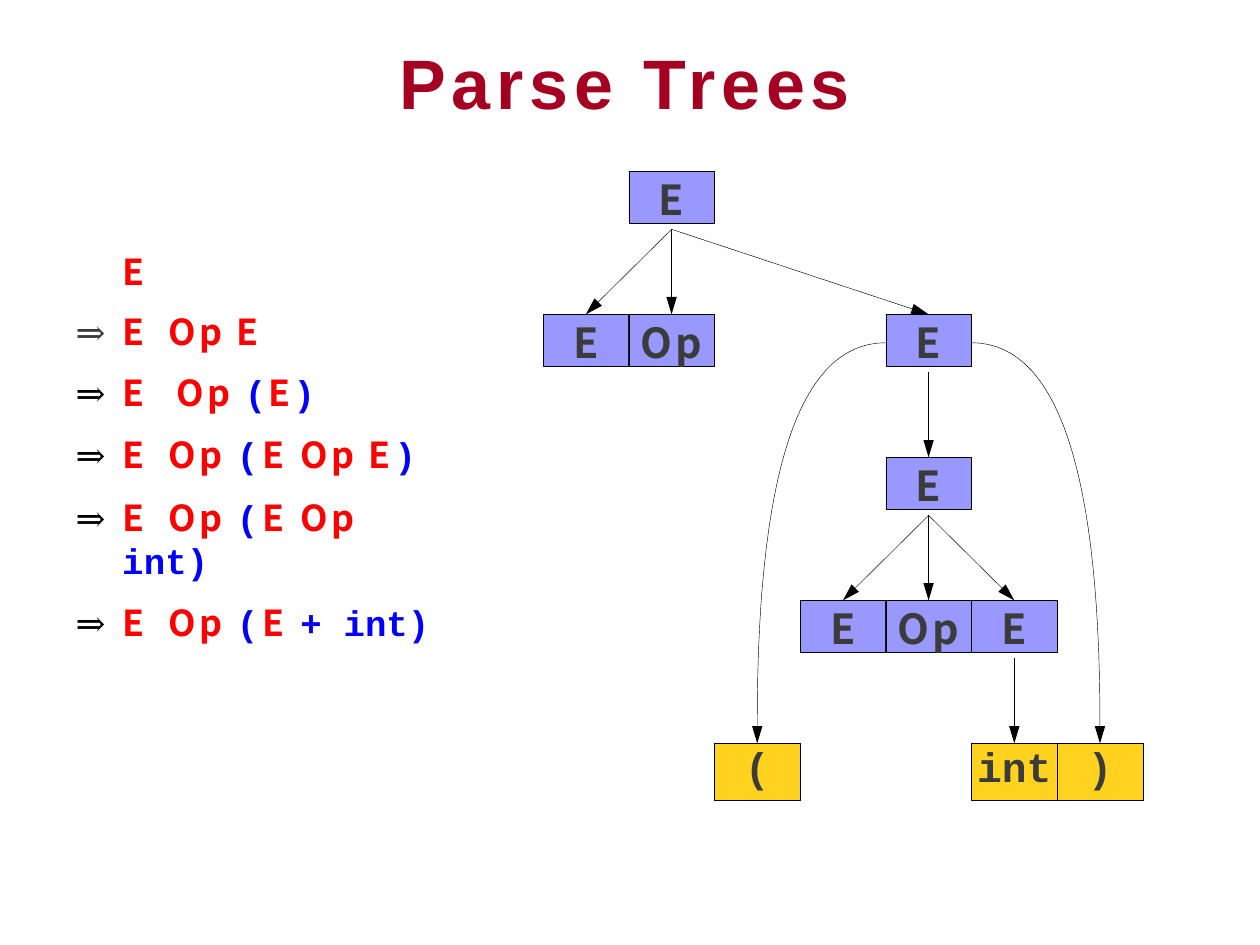
from lxml.etree import SubElement
from pptx import Presentation
from pptx.dml.color import RGBColor
from pptx.enum.shapes import MSO_CONNECTOR, MSO_SHAPE
from pptx.enum.text import MSO_ANCHOR, PP_ALIGN
from pptx.oxml.ns import qn
from pptx.util import Inches, Pt

SANS, MONO = "Noto Sans CJK KR", "Courier New"
BLACK, GREY, RED, BLUE = "000000", "3B3B3B", "FF0000", "0000FF"


def rgb(value):
    return RGBColor.from_string(value)


def finish_arrow(arrow):
    """Give a connector or open curve a thin black line, an arrowhead and no shadow."""
    arrow.line.color.rgb = rgb(BLACK)
    arrow.line.width = Pt(0.25)
    SubElement(arrow.line._get_or_add_ln(), qn("a:tailEnd"), type="triangle", w="med", len="lg")
    properties = arrow._element.spPr
    if properties.find(qn("a:effectLst")) is None:
        SubElement(properties, qn("a:effectLst"))


prs = Presentation()
prs.slide_width, prs.slide_height = Inches(10), Inches(7.5)
slide = prs.slides.add_slide(prs.slide_layouts[6])
shapes = slide.shapes

# Title
title = shapes.add_textbox(Inches(0.17), Inches(0.3), Inches(9.58), Inches(0.7)).text_frame
title.word_wrap = True
title.vertical_anchor = MSO_ANCHOR.MIDDLE
title.margin_left = title.margin_right = title.margin_top = title.margin_bottom = 0
heading = title.paragraphs[0]
heading.alignment = PP_ALIGN.CENTER
heading.font.name, heading.font.size, heading.font.bold = "Arial", Pt(40), True
heading.font.color.rgb = rgb("A50021")
heading_run = heading.add_run()
heading_run.text = "Parse Trees"
heading_run._r.get_or_add_rPr().set("spc", "335")

# Derivation: space before, arrow colour, then (symbol, letter spacing in points)
E, OP = ("E ", 4.7), ("Op ", 1.8)
derivation = [
    (10.9, None, [("E", 4.7)]),
    (10.1, GREY, [E, OP, ("E", 4.7)]),
    (10.1, BLACK, [("E ", 7), OP, ("(", 1.5), ("E", 1.5), (")", 1.5)]),
    (11.3, BLACK, [E, OP, ("(", 2.3), ("E ", 2.3), OP, ("E", 2.4), (")", 2.4)]),
    (11.3, BLACK, [E, OP, ("(", 2.3), ("E ", 2.3), OP, ("int)", 0.1)]),
    (11.3, BLACK, [E, OP, ("(", 2.3), ("E ", 2.3), ("+ ", 0.1), ("int)", 0)]),
]
steps = shapes.add_textbox(Inches(0.59), Inches(1.83), Inches(2.98), Inches(2.96)).text_frame
steps.word_wrap = True
steps.margin_left = steps.margin_right = steps.margin_bottom = 0
steps.margin_top = Inches(0.15)
for number, (space, arrow_color, symbols) in enumerate(derivation):
    step = steps.add_paragraph() if number else steps.paragraphs[0]
    step.space_before = Pt(space)
    step.font.size = Pt(20.4)
    indents = step._p.get_or_add_pPr()
    indents.set("marL", str(Inches(0.38)))
    pieces = [(text, spacing, MONO, BLUE, True) if text[0] in "(+)i"
              else (text, spacing, SANS, RED, True) for text, spacing in symbols]
    if arrow_color:
        indents.set("indent", str(-Inches(0.37)))
        pieces.insert(0, ("⇒\t", -0.5, "Cambria", arrow_color, False))
    for text, spacing, font, color, bold in pieces:
        run = step.add_run()
        run.text = text
        run.font.name, run.font.bold, run.font.size = font, bold, Pt(20.4)
        run.font.color.rgb = rgb(color)
        run._r.get_or_add_rPr().set("spc", str(round(spacing * 100)))

# Tree nodes on a grid of columns and levels
LEFT, TOP, CELL, LEVEL = 4.31, 1.36, 0.68, 1.135
NODE_HEIGHT, LEAF_HEIGHT = 0.41, 0.45
nodes = {}
for column, level, symbol in [
    (1, 0, "E"), (0, 1, "E"), (1, 1, "Op"), (4, 1, "E"), (4, 2, "E"),
    (3, 3, "E"), (4, 3, "Op"), (5, 3, "E"), (2, 4, "("), (5, 4, "int"), (6, 4, ")"),
]:
    leaf = level == 4
    node = shapes.add_shape(
        MSO_SHAPE.RECTANGLE, Inches(LEFT + column * CELL), Inches(TOP + level * LEVEL),
        Inches(CELL), Inches(LEAF_HEIGHT if leaf else NODE_HEIGHT))
    node.shadow.inherit = False
    node.fill.solid()
    node.fill.fore_color.rgb = rgb("FFD21F" if leaf else "9898FF")
    node.line.color.rgb = rgb(BLACK)
    node.line.width = Pt(0.25)
    frame = node.text_frame
    frame.vertical_anchor = MSO_ANCHOR.TOP
    frame.margin_left = frame.margin_right = frame.margin_bottom = 0
    frame.margin_top = Inches(0.03 if leaf else 0.02)
    label = frame.paragraphs[0]
    label.alignment = PP_ALIGN.CENTER
    label.font.name, label.font.size, label.font.bold = MONO if leaf else SANS, Pt(23.6), True
    label.font.color.rgb = rgb(GREY)
    if leaf:
        label.line_spacing = Pt(25.2)
    else:
        label.space_before = Pt(1.1)
    run = label.add_run()
    run.text = symbol
    run._r.get_or_add_rPr().set("spc", {"E": "530", "Op": "190"}.get(symbol, "0"))
    nodes[column, level] = node

# Straight branches start just below the parent and end on the child's top
for parent, children in [
    ((1, 0), [(0, 1), (1, 1), (4, 1)]),
    ((4, 1), [(4, 2)]),
    ((4, 2), [(3, 3), (4, 3), (5, 3)]),
    ((5, 3), [(5, 4)]),
]:
    start_x = Inches(LEFT + (parent[0] + 0.5) * CELL)
    start_y = Inches(TOP + parent[1] * LEVEL + NODE_HEIGHT + 0.05)
    for child in children:
        branch = shapes.add_connector(MSO_CONNECTOR.STRAIGHT, start_x, start_y, start_x, start_y)
        branch.end_connect(nodes[child], 0)
        finish_arrow(branch)

# Curved branches to the parentheses: a quarter bend, then straight into the leaf
BEND_WIDTH, BEND_HEIGHT, POINTS = 1.02, 3.02, 30
bend_top = TOP + LEVEL + 0.225
for start, direction in [(LEFT + 4 * CELL, -1), (LEFT + 5 * CELL, 1)]:
    bend = []
    for t in (i / POINTS for i in range(1, POINTS + 1)):
        bend.append((Inches(start + direction * BEND_WIDTH * (1 - (1 - t) ** 2)),
                     Inches(bend_top + BEND_HEIGHT * t ** 2)))
    bend.append((bend[-1][0], Inches(TOP + 4 * LEVEL)))
    outline = shapes.build_freeform(Inches(start), Inches(bend_top))
    outline.add_line_segments(bend, close=False)
    curve = outline.convert_to_shape()
    curve.fill.background()
    finish_arrow(curve)

prs.save("out.pptx")
